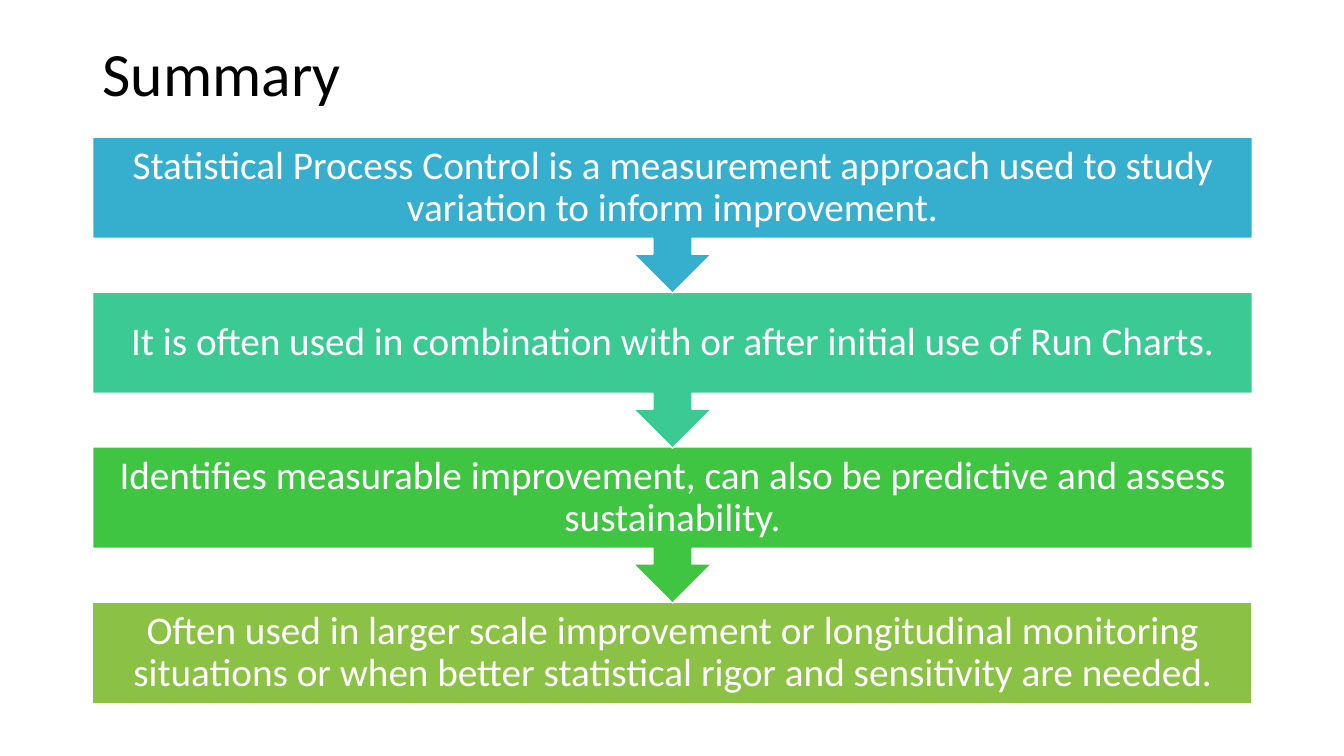
from pptx import Presentation
from pptx import util as u
from pptx.dml.color import RGBColor
from pptx.enum import shapes, text

BLACK = RGBColor(0x00, 0x00, 0x00)
WHITE = RGBColor(0xFF, 0xFF, 0xFF)
BLUE = RGBColor(0x36, 0xAF, 0xCE)
TEAL = RGBColor(0x3B, 0xCA, 0x93)
GREEN = RGBColor(0x40, 0xC5, 0x43)
LIME = RGBColor(0x8B, 0xC1, 0x45)

WIDTH, HEIGHT = 13.33, 7.5
TITLE_BOX = (0.92, 0.03, 11.5, 1.45)
STEPS_BOX = (0.92, 1.36, 11.5, 5.62)
STEP_GAP = 0.53
CALLOUT_OVERLAP = 0.01

STEPS = [
    ("Statistical Process Control is a measurement approach used to study "
     "variation to inform improvement.", BLUE),
    ("It is often used in combination with or after initial use of Run Charts.", TEAL),
    ("Identifies measurable improvement, can also be predictive and assess "
     "sustainability.", GREEN),
    ("Often used in larger scale improvement or longitudinal monitoring situations "
     "or when better statistical rigor and sensitivity are needed.", LIME),
]


def apply_format(target, values):
    """Set each attribute named in values on target."""
    for name, value in values.items():
        setattr(target, name, value)


def write_text(shape, wording, size, color, align, inset):
    """Write one vertically centred paragraph into a shape."""
    frame = shape.text_frame
    apply_format(frame, {
        "word_wrap": True,
        "vertical_anchor": text.MSO_ANCHOR.MIDDLE,
        "margin_left": u.Inches(inset),
        "margin_right": u.Inches(inset),
    })
    paragraph = frame.paragraphs[0]
    apply_format(paragraph, {"alignment": align, "line_spacing": 0.9})
    run = paragraph.add_run()
    run.text = wording
    apply_format(run.font, {"size": u.Pt(size), "name": "Calibri"})
    run.font.color.rgb = color


def add_title(slide, box, wording):
    """Place the slide title in its box."""
    shape = slide.shapes.add_textbox(*map(u.Inches, box))
    write_text(shape, wording, 44, BLACK, text.PP_ALIGN.LEFT, 0.1)


def add_steps(slide, box, steps):
    """Stack the steps evenly, each pointing down to the next."""
    left, top, width, height = box
    body = (height - STEP_GAP * (len(steps) - 1)) / len(steps)
    last = len(steps) - 1
    for index, (wording, color) in reversed(list(enumerate(steps))):
        is_last = index == last
        kind = (shapes.MSO_SHAPE.RECTANGLE if is_last
                else shapes.MSO_SHAPE.DOWN_ARROW_CALLOUT)
        tall = body if is_last else body + STEP_GAP + CALLOUT_OVERLAP
        step_box = (left, top + index * (body + STEP_GAP), width, tall)
        shape = slide.shapes.add_shape(kind, *map(u.Inches, step_box))
        shape.shadow.inherit = False
        shape.fill.solid()
        shape.fill.fore_color.rgb = color
        shape.line.color.rgb = WHITE
        shape.line.width = u.Pt(1)
        apply_format(shape.text_frame, {"margin_top": 0, "margin_bottom": 0})
        write_text(shape, wording, 28, WHITE, text.PP_ALIGN.CENTER, 0.22)


def main():
    """Build and save the summary slide."""
    presentation = Presentation()
    apply_format(presentation, {
        "slide_width": u.Inches(WIDTH),
        "slide_height": u.Inches(HEIGHT),
    })
    slide = presentation.slides.add_slide(presentation.slide_layouts[6])
    add_title(slide, TITLE_BOX, "Summary")
    add_steps(slide, STEPS_BOX, STEPS)
    presentation.save("out.pptx")


if __name__ == "__main__":
    main()
